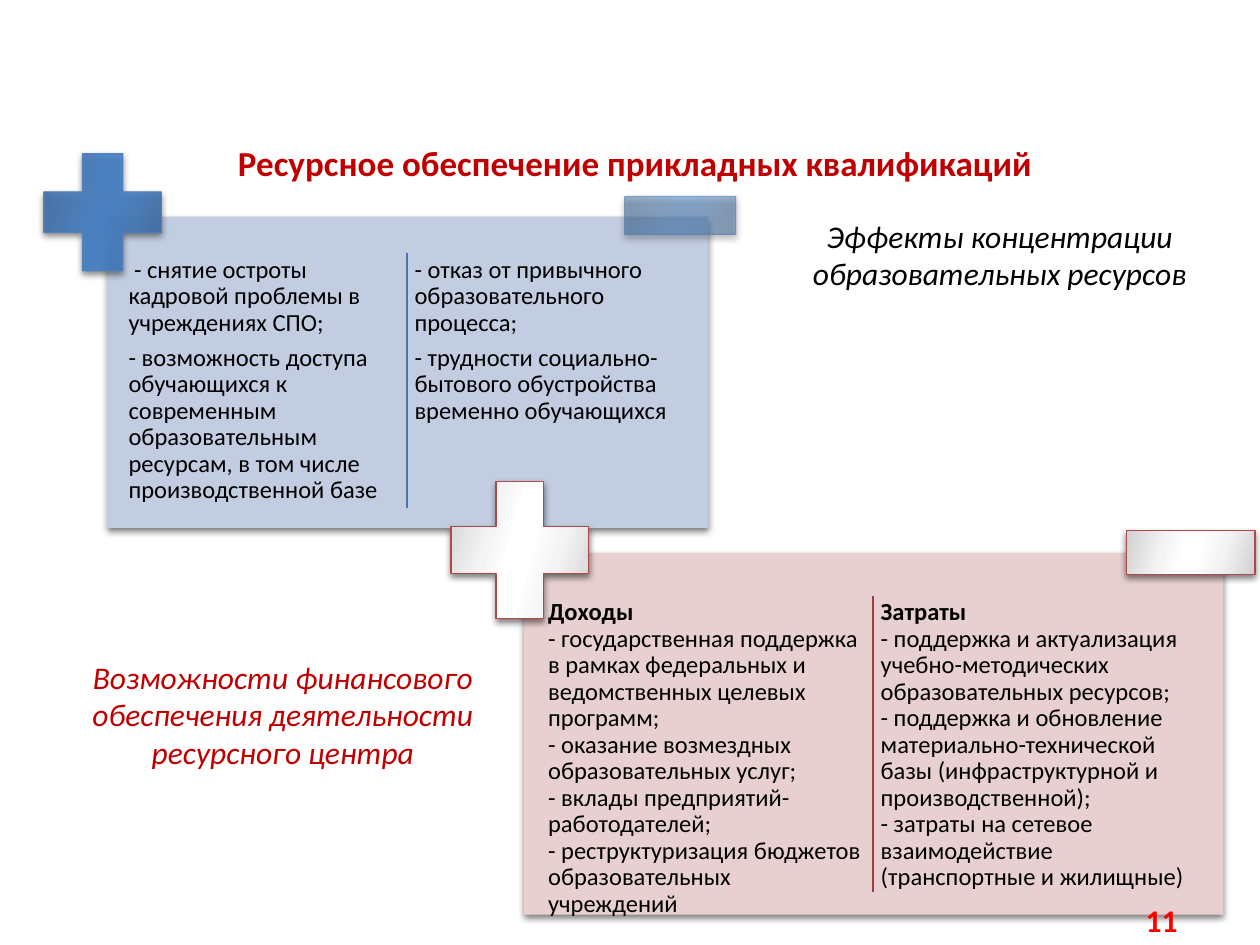
from lxml.etree import SubElement
from pptx import Presentation
from pptx.dml.color import RGBColor
from pptx.enum.shapes import MSO_CONNECTOR, MSO_SHAPE
from pptx.enum.text import PP_ALIGN
from pptx.oxml.ns import qn
from pptx.util import Inches, Pt

HUES = {
    "black": "000000", "crimson": "C00000", "red": "FF0000",
    "sky": "C2CDE1", "blue": "4F81BD", "steel": "4875AC",
    "rose": "E8D0D0", "brick": "AE4946", "wine": "9A403E",
    "blue1": "416A9B", "blue2": "467BBA", "blue3": "4580C7",
    "grey1": "D1D1D1", "grey2": "F4F4F4", "white": "FFFFFF",
}
STOPS = (0, 30, 45, 55, 73, 100)

# Labels: text, box, size, colour, bold, italic
LABELS = [
    ("Ресурсное обеспечение прикладных квалификаций",
     (0.59, 1.07, 8.9, 0.44), 20, "crimson", True, False),
    ("Эффекты концентрации образовательных ресурсов",
     (6.26, 1.67, 3.35, 0.71), 18, "black", False, True),
    ("Возможности финансового обеспечения деятельности ресурсного центра",
     (0.57, 5.17, 3.35, 1.01), 18, "crimson", False, True),
    ("11", (8.9, 7.1, 0.64, 0.4), 18, "red", True, False),
]

# Panels: each column is a head and a list of paragraphs, each a list of lines
PANELS = [
    {
        "box": (0.85, 1.72, 4.77, 2.47), "fill": "sky",
        "cols": [
            ("", [[" - снятие остроты кадровой проблемы в учреждениях СПО;"],
                  ["- возможность доступа обучающихся к современным образовательным "
                   "ресурсам, в том числе производственной базе"]]),
            ("", [["- отказ от привычного образовательного процесса;"],
                  ["- трудности социально-бытового обустройства временно "
                   "обучающихся"]]),
        ],
        "lefts": (0.99, 3.26), "area": (2.01, 2.22, 2.11),
        "rule": (3.23, 2.01, 4.03), "ink": "steel",
        "plus": (0.35, 1.22, 0.93, 0.93), "minus": (4.96, 1.56, 0.88, 0.3),
        "tones": ("blue1", "blue2", "blue3"), "edge": "blue",
        "alphas": (90, 50),
    },
    {
        "box": (4.16, 4.39, 5.55, 2.87), "fill": "rose",
        "cols": [
            ("Доходы", [[
                "- государственная поддержка в рамках федеральных и "
                "ведомственных целевых программ;",
                "- оказание возмездных образовательных услуг;",
                "- вклады предприятий-работодателей;",
                "- реструктуризация бюджетов образовательных учреждений"]]),
            ("Затраты", [[
                "- поддержка и актуализация учебно-методических "
                "образовательных ресурсов;",
                "- поддержка и обновление материально-технической базы "
                "(инфраструктурной и производственной);",
                "- затраты на сетевое взаимодействие (транспортные и "
                "жилищные)"]]),
        ],
        "lefts": (4.32, 6.96), "area": (4.73, 2.58, 2.46),
        "rule": (6.93, 4.73, 7.08), "ink": "wine",
        "plus": (3.58, 3.82, 1.09, 1.09), "minus": (8.94, 4.21, 1.02, 0.35),
        "tones": ("grey1", "grey2", "white"), "edge": "brick",
        "alphas": (100, 100),
    },
]


def rgb(name):
    return RGBColor.from_string(HUES[name])


def add_hue(node, name, alpha):
    hue = SubElement(node, qn("a:srgbClr"), val=HUES[name])
    if alpha < 100:
        SubElement(hue, qn("a:alpha"), val=str(alpha * 1000))


def add_block(slide, kind, box, fill):
    shape = slide.shapes.add_shape(kind, *map(Inches, box))
    shape.fill.solid()
    shape.fill.fore_color.rgb = rgb(fill)
    shape.line.fill.background()
    shape.shadow.inherit = False
    glow = SubElement(shape.element.spPr.find(qn("a:effectLst")),
                      qn("a:outerShdw"), blurRad=str(Pt(4)), dist=str(Pt(2)),
                      dir="5400000", rotWithShape="0")
    add_hue(glow, "black", 50)
    return shape


def add_sign(slide, kind, box, tones, edge, alpha):
    shape = add_block(slide, kind, box, tones[0])
    if kind == MSO_SHAPE.CROSS:
        shape.adjustments[0] = 0.328
    # Mirrored gradient in place of the plain fill
    props = shape.element.spPr
    solid = props.find(qn("a:solidFill"))
    grad = solid.makeelement(qn("a:gradFill"), {"rotWithShape": "1"})
    props.replace(solid, grad)
    stops = SubElement(grad, qn("a:gsLst"))
    for pos, tone in zip(STOPS, tones + tones[::-1]):
        add_hue(SubElement(stops, qn("a:gs"), pos=str(pos * 1000)), tone, alpha)
    SubElement(grad, qn("a:lin"), ang=str(16 * 60000), scaled="0")
    # Outline
    shape.line.width = Pt(0.75)
    shape.line.color.rgb = rgb(edge)
    if alpha < 100:
        hue = props.find(qn("a:ln")).find(".//" + qn("a:srgbClr"))
        SubElement(hue, qn("a:alpha"), val=str(alpha * 1000))


def add_frame(slide, box):
    frame = slide.shapes.add_textbox(*map(Inches, box)).text_frame
    frame.word_wrap = True
    return frame


def set_font(para, size, hue):
    font = para.font
    font.name, font.size, font.color.rgb = "Calibri", Pt(size), rgb(hue)
    return font


def add_column(slide, box, head, paras):
    frame = add_frame(slide, box)
    frame.margin_left = frame.margin_right = Inches(0.03)
    frame.margin_top = frame.margin_bottom = Inches(0.03)
    for i, lines in enumerate(paras):
        para = frame.add_paragraph() if i else frame.paragraphs[0]
        para.line_spacing, para.space_after = 0.9, Pt(4.9)
        set_font(para, 14, "black")
        if head:
            run = para.add_run()
            run.text, run.font.bold = head, True
        for j, line in enumerate(lines):
            if head or j:
                para.add_line_break()
            para.add_run().text = line


def add_panel(slide, panel):
    add_block(slide, MSO_SHAPE.RECTANGLE, panel["box"], panel["fill"])
    for left, (head, paras) in zip(panel["lefts"], panel["cols"]):
        top, width, height = panel["area"]
        add_column(slide, (left, top, width, height), head, paras)
    kinds = (MSO_SHAPE.CROSS, MSO_SHAPE.RECTANGLE)
    for kind, key, alpha in zip(kinds, ("plus", "minus"), panel["alphas"]):
        add_sign(slide, kind, panel[key], panel["tones"], panel["edge"], alpha)
    # Divider between the columns
    x, top, end = map(Inches, panel["rule"])
    rule = slide.shapes.add_connector(MSO_CONNECTOR.STRAIGHT, x, top, x, end)
    rule.line.width = Pt(1.5)
    rule.line.color.rgb = rgb(panel["ink"])
    SubElement(rule.element.spPr, qn("a:effectLst"))


def add_label(slide, text, box, size, hue, bold, italic):
    para = add_frame(slide, box).paragraphs[0]
    para.text, para.alignment = text, PP_ALIGN.CENTER
    font = set_font(para, size, hue)
    font.bold, font.italic = bold, italic


def main():
    deck = Presentation()
    deck.slide_width, deck.slide_height = Inches(10), Inches(7.5)
    slide = deck.slides.add_slide(deck.slide_layouts[6])
    for panel in PANELS:
        add_panel(slide, panel)
    for label in LABELS:
        add_label(slide, *label)
    deck.save("out.pptx")


if __name__ == "__main__":
    main()
